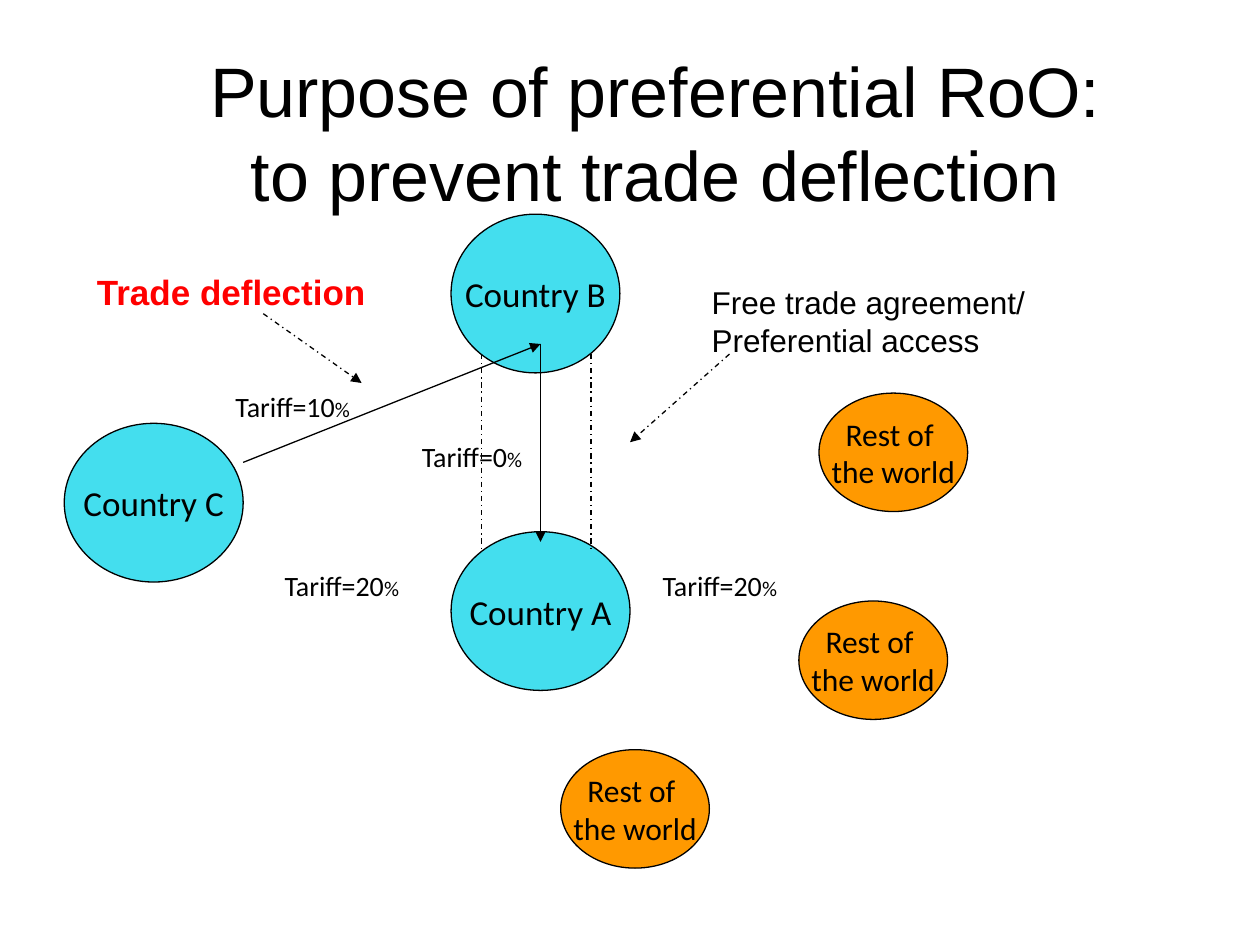
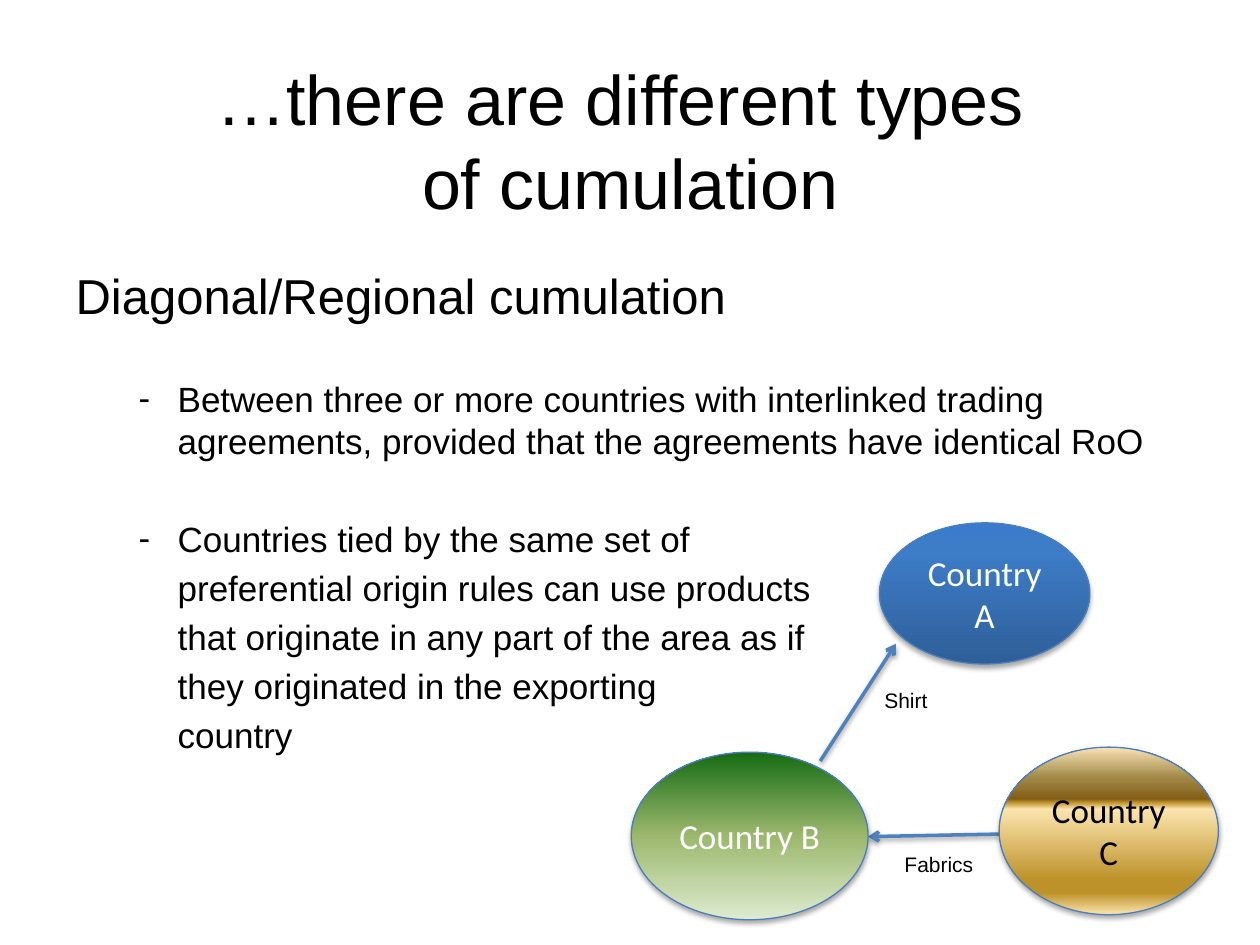
import lxml.etree
import pptx
import pptx.dml.color
import pptx.enum.dml
import pptx.enum.shapes
import pptx.enum.text
import pptx.util
from pptx.oxml.ns import qn

Inches, Pt = pptx.util.Inches, pptx.util.Pt
BLACK, WHITE, RED = "000000", "FFFFFF", "FF0000"
MEMBER, OUTSIDER = "44DEEE", "FF9900"
OUTLINE, FLOW = "4B7EBC", "4F81BD"
SANS, DIAGRAM = "Arial", "Calibri"

BLUE = [(0, "2F5F99"), (80, "3D7CC7"), (100, "3A7CCB")]
GREEN = [(0, "DDEBCF"), (50, "9CB86E"), (100, "156B13")]
GOLD = [(0, "FBE4AE"), (13, "BD922A"), (21, "BD922A"), (63, "FBE4AE"),
        (67, "BD922A"), (69, "835E17"), (82, "A28949"), (100, "FAE3B7")]


# Shared helpers
def rgb(color):
    return pptx.dml.color.RGBColor.from_string(color)


def sub(parent, tag, **attrs):
    return lxml.etree.SubElement(parent, qn(tag), {k: str(v) for k, v in attrs.items()})


def style(p, size, font=SANS, color=BLACK, bold=False):
    for r in p.runs:
        r.font.size, r.font.name, r.font.bold = Pt(size), font, bold
        r.font.color.rgb = rgb(color)


def place(sp, x, y, w, h):
    sp.left, sp.top, sp.width, sp.height = map(Inches, (x, y, w, h))


def set_effects(sp, opacity=0, distance=0):
    """Replace the theme shadow with a soft one below, or with none."""
    effects = sub(sp._element.spPr, "a:effectLst")
    if opacity:
        shadow = sub(effects, "a:outerShdw", blurRad=Pt(3.1), dist=Pt(distance),
                     dir=5400000, rotWithShape=0)
        sub(sub(shadow, "a:srgbClr", val=BLACK), "a:alpha", val=opacity * 1000)


def add_gradient(sp, stops):
    sp.fill.gradient()
    sp.fill.gradient_angle = 90
    gs_list = sp._element.spPr.find(qn("a:gradFill")).find(qn("a:gsLst"))
    gs_list[:] = []
    for pos, color in stops:
        sub(sub(gs_list, "a:gs", pos=pos * 1000), "a:srgbClr", val=color)


def add_ellipse(s, box, text, fill, line=BLACK, size=20, color=BLACK, wrap=False):
    sp = s.shapes.add_shape(pptx.enum.shapes.MSO_SHAPE.OVAL, *map(Inches, box))
    sp.line.color.rgb, sp.line.width = rgb(line), Pt(0.75)
    if isinstance(fill, str):
        sp.fill.solid()
        sp.fill.fore_color.rgb = rgb(fill)
        set_effects(sp)
    else:
        add_gradient(sp, fill)
        set_effects(sp, 35, 1.8)
    tf = sp.text_frame
    tf.text, tf.word_wrap = text, wrap
    tf.vertical_anchor = pptx.enum.text.MSO_ANCHOR.MIDDLE
    for p in tf.paragraphs:
        p.alignment = pptx.enum.text.PP_ALIGN.CENTER
        style(p, size, DIAGRAM, color)


def add_line(s, x1, y1, x2, y2, color=BLACK, width=0.75, dashed=False, head=None):
    ln = s.shapes.add_connector(pptx.enum.shapes.MSO_CONNECTOR.STRAIGHT,
                                *map(Inches, (x1, y1, x2, y2)))
    ln.line.color.rgb, ln.line.width = rgb(color), Pt(width)
    if dashed:
        ln.line.dash_style = pptx.enum.dml.MSO_LINE.DASH_DOT
    if head:
        sub(ln._element.spPr.find(qn("a:ln")), "a:tailEnd", type=head)
    return ln


def add_label(s, box, text, size, wrap=False, **look):
    tf = s.shapes.add_textbox(*map(Inches, box)).text_frame
    tf.text, tf.word_wrap = text, wrap
    for p in tf.paragraphs:
        style(p, size, **look)
    return tf


def add_title(s, text, *box):
    title = s.shapes.title
    place(title, *box)
    tf = title.text_frame
    tf.text = text
    tf.auto_size = pptx.enum.text.MSO_AUTO_SIZE.NONE
    tf.vertical_anchor = pptx.enum.text.MSO_ANCHOR.MIDDLE
    p = tf.paragraphs[0]
    p.alignment = pptx.enum.text.PP_ALIGN.CENTER
    style(p, 40)


# Slide 1: tariffs between the countries
def tariff_map(s, x, y):
    for name, dx, dy, w in [("C", 0.01, 1.66, 1.42), ("B", 3.08, 0, 1.34),
                            ("A", 3.08, 2.52, 1.42)]:
        add_ellipse(s, (x + dx, y + dy, w, 1.26), f"Country {name}", MEMBER)
    for dx, dy in [(6, 1.42), (5.84, 3.07), (3.95, 4.25)]:
        add_ellipse(s, (x + dx, y + dy, 1.18, 0.94), "Rest of \nthe world",
                    OUTSIDER, size=18)

    # Trade flows, callouts and the corridor between A and B
    for x1, y1, x2, y2, dashed, head in [
            (3.79, 1.03, 3.79, 2.6, False, "triangle"),
            (1.43, 1.97, 3.79, 1.03, False, "triangle"),
            (1.59, 0.79, 2.37, 1.34, True, "triangle"),
            (5.29, 1.11, 4.5, 1.81, True, "triangle"),
            (3.32, 1.11, 3.32, 2.68, True, None),
            (4.19, 1.11, 4.19, 2.68, True, None)]:
        ln = add_line(s, x + x1, y + y1, x + x2, y + y2, dashed=dashed, head=head)
        set_effects(ln)

    # Labels
    add_label(s, (x + 5.05, y + 0.5, 2.71, 0.71),
              "Free trade agreement/\nPreferential access", 18)
    add_label(s, (x + 0.17, y + 0.4, 2.35, 0.44), "Trade deflection", 20,
              color=RED, bold=True)
    for rate, dx, dy, w in [(10, 1.27, 1.34, 1.21), (0, 2.75, 1.74, 1.16),
                            (20, 4.66, 2.76, 1.21), (20, 1.66, 2.76, 1.21)]:
        tf = add_label(s, (x + dx, y + dy, w, 0.37), f"Tariff={rate}", 16, font=DIAGRAM)
        p = tf.paragraphs[0]
        p.add_run().text = "%"
        style(p, 16, DIAGRAM)
        p.runs[-1].font.size = Pt(12)


# Slide 2: list and cumulation diagram
def cumulation_list(s, *box):
    body = s.placeholders[1]
    place(body, *box)
    tf = body.text_frame
    tf.auto_size = pptx.enum.text.MSO_AUTO_SIZE.NONE
    # text, bullet, extra space before
    lines = [
        ("Diagonal/Regional cumulation", False, None),
        ("Between three or more countries with interlinked trading agreements, "
         "provided that the agreements have identical RoO", True, 30),
        ("Countries tied by the same set of", True, 32),
        ("preferential origin rules can use products", False, None),
        ("that originate in any part of the area as if", False, None),
        ("they originated in the exporting", False, None),
        ("country", False, None)]
    tf.text = "\n".join(text for text, _, _ in lines)
    for i, (p, (_, bullet, space)) in enumerate(zip(tf.paragraphs, lines)):
        p.level = min(i, 1)
        style(p, 20 if i else 28)
        if space:
            p.space_before = Pt(space)
        pPr = p._p.get_or_add_pPr()
        pPr.set("marL", str(Inches(0.81 if i else 0)))
        pPr.set("indent", str(Inches(-0.31 if bullet else 0)))
        if bullet:
            sub(pPr, "a:buChar", char="-")
        else:
            sub(pPr, "a:buNone")


def cumulation_diagram(s, x, y):
    for x1, y1, x2, y2 in [(2.93, 2.47, 1.89, 2.49), (1.51, 1.89, 2.11, 0.96)]:
        ln = add_line(s, x + x1, y + y1, x + x2, y + y2, FLOW, 2, head="arrow")
        set_effects(ln, 38, 1.6)
    for name, dx, dy, w, h, fill, color in [
            ("A", 1.98, 0, 1.67, 1.12, BLUE, WHITE),
            ("B", 0.01, 1.82, 1.88, 1.33, GREEN, WHITE),
            ("C", 2.93, 1.78, 1.74, 1.33, GOLD, BLACK)]:
        add_ellipse(s, (x + dx, y + dy, w, h), f"Country {name}", fill,
                    OUTLINE, color=color, wrap=True)
    for goods, dx, dy in [("Fabrics", 2.08, 2.56), ("Shirt", 1.92, 1.26)]:
        add_label(s, (x + dx, y + dy, 1.28, 0.3), goods, 12, wrap=True)


def main():
    prs = pptx.Presentation()
    prs.slide_width, prs.slide_height = Inches(10), Inches(7.5)

    s = prs.slides.add_slide(prs.slide_layouts[5])
    add_title(s, "Purpose of preferential RoO:\vto prevent trade deflection",
              0.7, 0.68, 9, 0.73)
    tariff_map(s, 0.5, 1.7)

    s = prs.slides.add_slide(prs.slide_layouts[1])
    add_title(s, "…there are different types \vof cumulation", 0.5, 0.84, 9, 0.54)
    cumulation_list(s, 0.5, 2.06, 9, 5.2)
    cumulation_diagram(s, 5, 4.15)

    prs.save("out.pptx")


if __name__ == "__main__":
    main()
